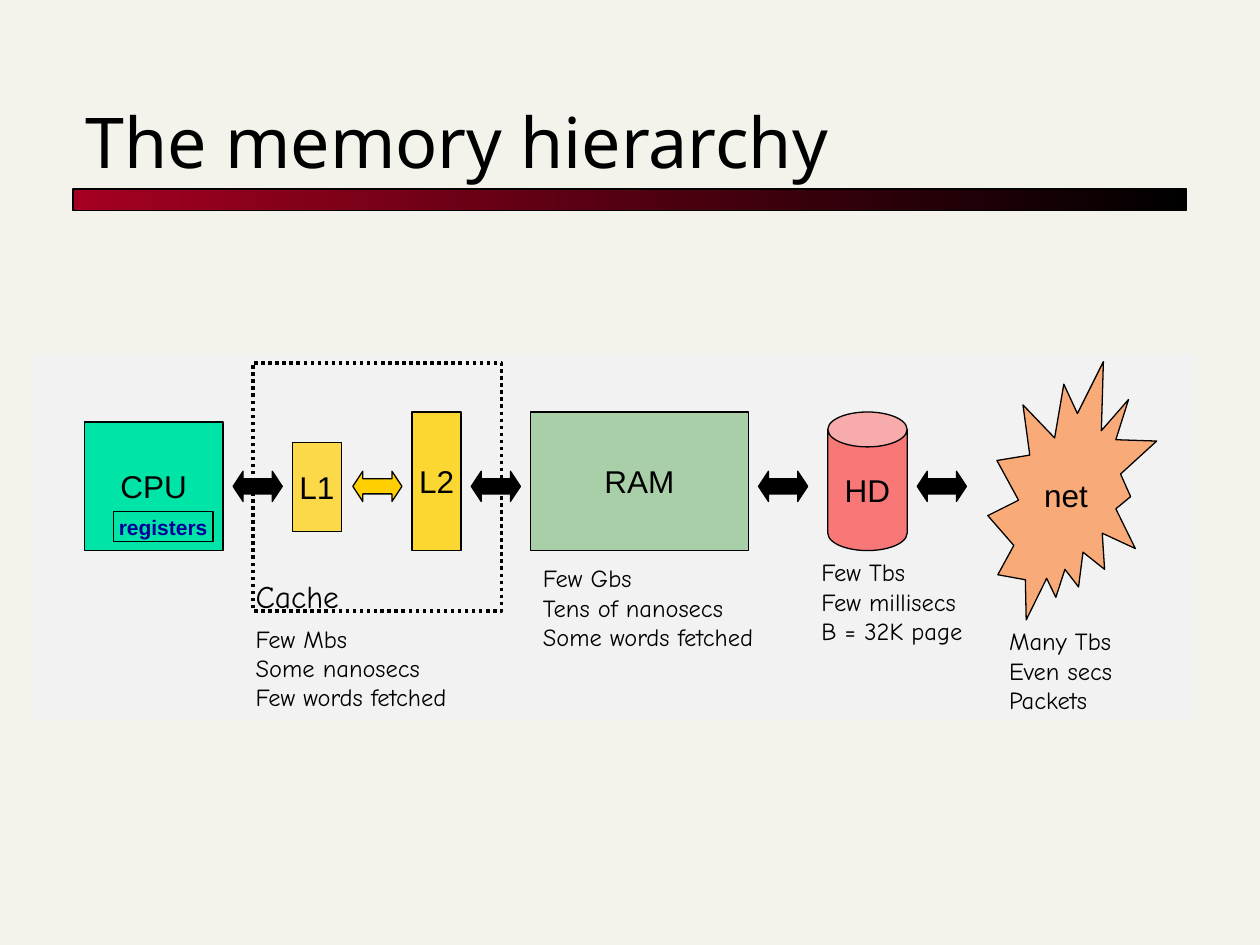
from lxml.etree import SubElement
from pptx import Presentation
from pptx.dml.color import RGBColor
from pptx.enum.dml import MSO_LINE
from pptx.enum.shapes import MSO_SHAPE as Shape
from pptx.enum.text import MSO_ANCHOR as Anchor, MSO_AUTO_SIZE as AutoSize, PP_ALIGN as Align
from pptx.oxml.ns import qn
from pptx.util import Inches, Pt


def write(box, lines, font, frame_format, align):
    """Fill a box with (text, size, colour, bold, line spacing) lines."""
    frame = box.text_frame
    for name, value in frame_format.items():
        setattr(frame, name, value)
    for i, (text, size, colour, bold, spacing) in enumerate(lines):
        para = frame.paragraphs[0] if i == 0 else frame.add_paragraph()
        para.alignment = align
        if spacing:
            para.line_spacing = spacing
        span = para.add_run()
        span.text = text
        span.font.color.rgb = RGBColor.from_string(colour)
        for name, value in {"name": font, "size": Pt(size), "bold": bold}.items():
            setattr(span.font, name, value)


def draw(parent, kind, place, fill, line="000000", width=0.75, opacity=100):
    """Add a preset shape without a shadow."""
    shape = parent.shapes.add_shape(kind, *map(Inches, place))
    shape.shadow.inherit = False
    if fill:
        shape.fill.solid()
        shape.fill.fore_color.rgb = RGBColor.from_string(fill)
    else:
        shape.fill.background()
    if opacity < 100:
        colour = shape.fill._xPr.find(".//" + qn("a:srgbClr"))
        SubElement(colour, qn("a:alpha")).set("val", str(opacity * 1000))
    if line:
        shape.line.color.rgb = RGBColor.from_string(line)
        shape.line.width = Pt(width)
    else:
        shape.line.fill.background()
    return shape


deck = Presentation()
deck.slide_width, deck.slide_height = Inches(10), Inches(7.5)
page = deck.slides.add_slide(deck.slide_layouts[5])
page.background.fill.solid()
page.background.fill.fore_color.rgb = RGBColor.from_string("F4F3EB")

# Title with its gradient bar
title = page.shapes.title
title_place = {"left": 0.58, "top": 0.42, "width": 8.83, "height": 1.08}
for name, value in title_place.items():
    setattr(title, name, Inches(value))
write(title, [("The memory hierarchy", 40, "000000", False, None)], "Noto Sans",
      {"vertical_anchor": Anchor.BOTTOM, "word_wrap": True, "auto_size": AutoSize.NONE}, Align.LEFT)

bar = draw(page, Shape.RECTANGLE, (0.58, 1.5, 8.84, 0.17), "000000")
bar.fill.gradient()
bar.fill.gradient_angle = 0
for stop, colour, position in zip(bar.fill.gradient_stops, ("A50021", "000000"), (0, 1)):
    stop.color.rgb = RGBColor.from_string(colour)
    stop.position = position

# Diagram panel
diagram = page.shapes.add_group_shape()
draw(diagram, Shape.RECTANGLE, (0.27, 2.81, 9.21, 2.91), "F2F2F2", line=None)

# Memory levels: label, shape, place, fill, opacity, size, text colour, bold
levels = [
    ("CPU", Shape.RECTANGLE, (0.67, 3.35, 1.1, 1.02), "00E4A8", 100, 18, "000000", False),
    ("registers", Shape.RECTANGLE, (0.9, 4.06, 0.79, 0.24), "00E4A8", 100, 12, "000099", True),
    ("L1", Shape.RECTANGLE, (2.32, 3.51, 0.39, 0.71), "FFCF01", 70, 18, "000000", False),
    ("L2", Shape.RECTANGLE, (3.27, 3.27, 0.39, 1.1), "FFCF01", 80, 18, "000000", False),
    ("RAM", Shape.RECTANGLE, (4.21, 3.27, 1.73, 1.1), "008000", 30, 18, "000000", False),
    ("HD", Shape.CAN, (6.57, 3.27, 0.63, 1.1), "FF0000", 50, 18, "000000", False),
    ("net", Shape.EXPLOSION2, (7.84, 2.87, 1.34, 2.05), "FF6600", 50, 18, "000000", False),
]
for label, kind, place, fill, opacity, size, colour, bold in levels:
    level = draw(diagram, kind, place, fill, opacity=opacity)
    if kind == Shape.CAN:
        level.adjustments[0] = 0.44
    write(level, [(label, size, colour, bold, None)], "Arial",
          {"vertical_anchor": Anchor.MIDDLE, "word_wrap": False}, Align.CENTER)

# Dotted frame around the cache
cache = draw(diagram, Shape.RECTANGLE, (2.01, 2.88, 1.97, 1.97), None, width=2)
cache.line.dash_style = MSO_LINE.ROUND_DOT

# Arrows between neighbouring levels
for left, fill in [(1.85, "000000"), (2.8, "FFCF01"), (3.74, "000000"),
                   (6.02, "000000"), (7.28, "000000")]:
    arrow = draw(diagram, Shape.LEFT_RIGHT_ARROW, (left, 3.74, 0.39, 0.24), fill)
    arrow.adjustments[0], arrow.adjustments[1] = 0.5, 0.33

# Size, latency and transfer unit of each level
notes = [
    ((1.93, 4.53, 1.94, 1.17), ["Cache", "Few Mbs", "Some nanosecs", "Few words fetched"]),
    ((4.21, 4.42, 2.08, 0.8), ["Few Gbs", "Tens of nanosecs", "Some words fetched"]),
    ((6.42, 4.37, 0.96, 0.33), ["Few Tbs"]),
    ((6.42, 4.61, 1.38, 0.57), ["Few millisecs", "B = 32K page"]),
    ((7.91, 4.92, 1.08, 0.8), ["Many Tbs", "Even secs", "Packets"]),
]
for place, texts in notes:
    note = diagram.shapes.add_textbox(*map(Inches, place))
    lines = [(text, 18 if text == "Cache" else 14, "000000", False,
              1.3 if text == "Few Mbs" else None) for text in texts]
    write(note, lines, "Comic Neue",
          {"word_wrap": False, "auto_size": AutoSize.SHAPE_TO_FIT_TEXT}, Align.LEFT)

deck.save("out.pptx")
